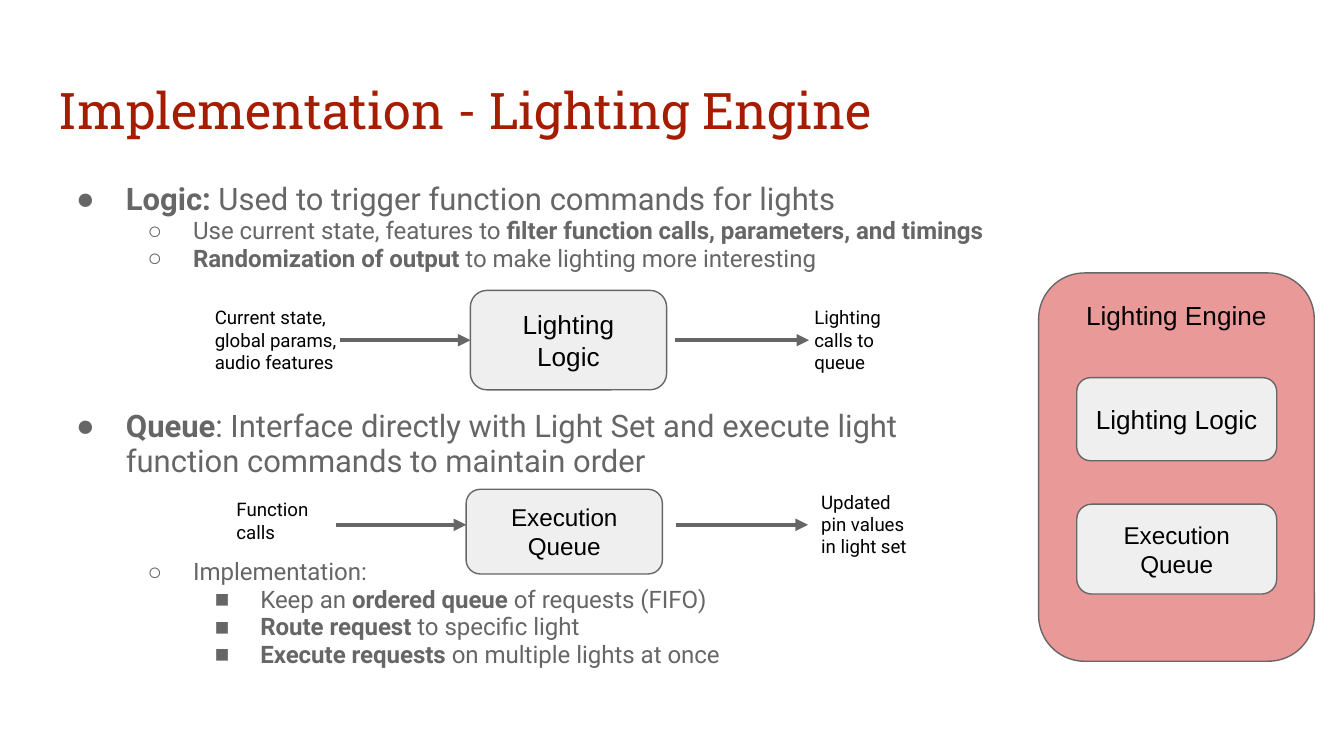
from pptx import Presentation
from pptx.dml.color import RGBColor
from pptx.enum.shapes import MSO_CONNECTOR as Connector, MSO_SHAPE as Shape
from pptx.enum.text import MSO_ANCHOR as Anchor, MSO_AUTO_SIZE as AutoSize, PP_ALIGN as Align
from pptx.oxml.ns import qn
from pptx.util import Cm, Pt
from lxml.etree import SubElement

RED, GREY, BLACK, PINK, PALE = "A61C00", "666666", "000000", "EA9999", "EFEFEF"
TITLE = "Implementation - Lighting Engine"
LEVELS = [
    {"bullet": "●", "size": 16.6, "left": 1.27, "hang": 0.94},
    {"bullet": "○", "size": 12.9, "left": 2.54, "hang": 0.86},
    {"bullet": "■", "size": 12.9, "left": 3.81, "hang": 0.86},
]
# level, space before, (words, bold) spans
POINTS = [
    (0, 0, [("Logic:", True), (" Used to trigger function commands for lights", False)]),
    (1, 0, [("Use current state, features to ", False),
            ("filter function calls, parameters, and timings", True)]),
    (1, 0, [("Randomization of output", True), (" to make lighting more interesting", False)]),
    (0, 73, [("Queue", True), (": Interface directly with Light Set and execute light "
                               "function commands to maintain order", False)]),
    (1, 42.5, [("Implementation:", False)]),
    (2, 0, [("Keep an ", False), ("ordered queue", True), (" of requests (FIFO)", False)]),
    (2, 0, [("Route request", True), (" to specific light", False)]),
    (2, 0, [("Execute requests", True), (" on multiple lights at once", False)]),
]
ENGINE = [
    ("Lighting Engine", (19.63, 5.16, 5.21, 7.34), PINK, 14, Anchor.TOP),
    ("Lighting Logic", (20.35, 7.14, 3.78, 1.57), PALE, 14, Anchor.MIDDLE),
    ("Execution Queue", (20.35, 9.53, 3.78, 1.7), PALE, 13, Anchor.MIDDLE),
]
FLOWS = [
    {"step": "Lighting Logic", "size": 14, "place": (8.89, 5.49, 3.71, 1.88), "lift": 0,
     "start": 6.43, "exit": (12.75, 15.29),
     "labels": [("Current state, global params, audio features", (3.81, 5.54, 3.28, 1.8)),
                ("Lighting calls to queue", (15.14, 5.54, 2.3, 1.8))]},
    {"step": "Execution Queue", "size": 13, "place": (8.81, 9.25, 3.71, 1.6), "lift": 0.13,
     "start": 6.35, "exit": (12.78, 15.27),
     "labels": [("Function calls", (4.22, 9.17, 2.46, 1.37)),
                ("Updated pin values in light set", (15.27, 9.02, 2.3, 1.8))]},
]


def color(value):
    return RGBColor.from_string(value)


def lengths(values):
    return [Cm(value) for value in values]


def set_frame(box, anchor=Anchor.TOP):
    frame = box.text_frame
    settings = {"word_wrap": True, "auto_size": AutoSize.NONE, "vertical_anchor": anchor}
    settings.update({f"margin_{side}": Cm(0.25) for side in ("left", "top", "right", "bottom")})
    for name, value in settings.items():
        setattr(frame, name, value)
    return frame


def add_span(para, words, size, font, shade, bold=False):
    span = para.add_run()
    span.text = words
    for name, value in {"size": Pt(size), "name": font, "bold": bold}.items():
        setattr(span.font, name, value)
    span.font.color.rgb = color(shade)


def move(box, place):
    for name, value in zip(("left", "top", "width", "height"), lengths(place)):
        setattr(box, name, value)


def add_point(para, level, before, spans):
    style = LEVELS[level]
    for name, value in {"level": level, "line_spacing": 0.95, "space_before": Pt(before),
                        "space_after": Pt(0), "alignment": Align.LEFT}.items():
        setattr(para, name, value)
    layout = para._p.get_or_add_pPr()
    layout.set("marL", str(Cm(style["left"])))
    layout.set("indent", str(-Cm(style["hang"])))
    SubElement(SubElement(layout, qn("a:buClr")), qn("a:srgbClr")).set("val", GREY)
    SubElement(layout, qn("a:buChar")).set("char", style["bullet"])
    for words, bold in spans:
        add_span(para, words, style["size"], "Roboto", GREY, bold)


def add_block(shapes, words, place, fill, size, anchor=Anchor.MIDDLE):
    block = shapes.add_shape(Shape.ROUNDED_RECTANGLE, *lengths(place))
    block.shadow.inherit = False
    block.fill.solid()
    block.fill.fore_color.rgb = color(fill)
    block.line.color.rgb = color(GREY)
    block.line.width = Pt(0.75)
    para = set_frame(block, anchor).paragraphs[0]
    para.alignment = Align.CENTER
    add_span(para, words, size, "Arial", BLACK)
    return block


def add_arrow(shapes, start, end, y):
    arrow = shapes.add_connector(Connector.STRAIGHT, *lengths((start, y, end, y)))
    arrow.line.color.rgb = color(GREY)
    arrow.line.width = Pt(2.25)
    SubElement(arrow.line._get_or_add_ln(), qn("a:tailEnd")).set("type", "triangle")
    SubElement(arrow._element.spPr, qn("a:effectLst"))
    return arrow


def add_flow(shapes, flow):
    left, top, _, height = flow["place"]
    y = top + height / 2 - flow["lift"]
    block = add_block(shapes, flow["step"], flow["place"], PALE, flow["size"])
    entry = add_arrow(shapes, flow["start"], left, y)
    if not flow["lift"]:
        entry.end_connect(block, 1)
    add_arrow(shapes, *flow["exit"], y)
    for words, place in flow["labels"]:
        label = shapes.add_textbox(*lengths(place))
        add_span(set_frame(label).paragraphs[0], words, 10, "Roboto", BLACK)


def main():
    """Build the Lighting Engine implementation slide."""
    deck = Presentation()
    deck.slide_width, deck.slide_height = lengths((25.4, 14.29))
    page = deck.slides.add_slide(deck.slide_layouts[1])
    title, body = page.placeholders
    move(title, (0.86, 1.24, 23.67, 1.6))
    heading = set_frame(title).paragraphs[0]
    heading.alignment = Align.LEFT
    add_span(heading, TITLE, 27, "Roboto Slab", RED)

    move(body, (0.86, 3.2, 18.36, 9.93))
    frame = set_frame(body)
    for number, point in enumerate(POINTS):
        add_point(frame.add_paragraph() if number else frame.paragraphs[0], *point)

    engine = page.shapes.add_group_shape()
    for block in ENGINE:
        add_block(engine.shapes, *block)
    for flow in FLOWS:
        add_flow(page.shapes, flow)
    deck.save("out.pptx")


if __name__ == "__main__":
    main()
